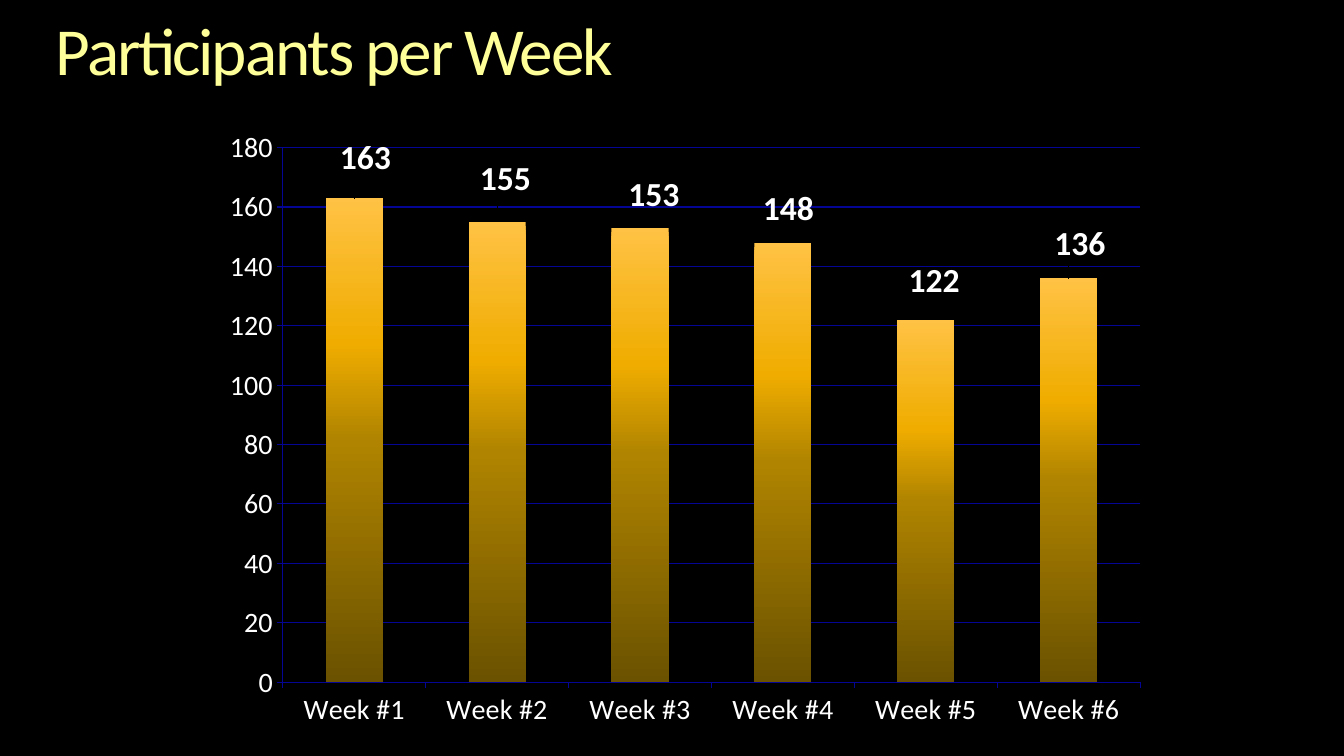
from lxml import etree
from pptx import Presentation
from pptx.chart.data import CategoryChartData
from pptx.dml.color import RGBColor
from pptx.enum.chart import XL_CHART_TYPE, XL_LABEL_POSITION, XL_TICK_MARK
from pptx.enum.text import MSO_ANCHOR, MSO_AUTO_SIZE, PP_ALIGN
from pptx.oxml import parse_xml
from pptx.oxml.ns import nsdecls, qn
from pptx.util import Pt

COLUMN_CLUSTERED = XL_CHART_TYPE.COLUMN_CLUSTERED
OUTSIDE_END = XL_LABEL_POSITION.OUTSIDE_END
TICK_OUTSIDE = XL_TICK_MARK.OUTSIDE
TICK_NONE = XL_TICK_MARK.NONE
MIDDLE = MSO_ANCHOR.MIDDLE
GROW = MSO_AUTO_SIZE.SHAPE_TO_FIT_TEXT
LEFT = PP_ALIGN.LEFT

BLACK = RGBColor(0x00, 0x00, 0x00)
WHITE = RGBColor(0xFF, 0xFF, 0xFF)
NAVY = RGBColor(0x05, 0x05, 0x95)
CREAM = RGBColor(0xFF, 0xFF, 0xB9)
YELLOW = RGBColor(0xFF, 0xFF, 0x99)
ORANGE = RGBColor(0xF6, 0xAE, 0x1E)
LIGHT_GOLD = RGBColor(0xFF, 0xC2, 0x44)
GOLD = RGBColor(0xF0, 0xAD, 0x00)
DARK_GOLD = RGBColor(0xB0, 0x84, 0x00)
BROWN = RGBColor(0x6B, 0x52, 0x00)

FONT_NAME = "Calibri"
CHART_WIDTH, CHART_HEIGHT = 678, 444
PLOT_AREA = {"x": 52, "y": 21.5, "w": 612.5, "h": 381.8}
TITLE_STOPS = [(0, CREAM), (36, YELLOW), (86, ORANGE)]
BAR_STOPS = [(0, LIGHT_GOLD), (30, GOLD), (50, DARK_GOLD), (100, BROWN)]
WEEKS = [
    (163, 8, -11),
    (155, 6, -13),
    (153, 10, -6),
    (148, 4, -6),
    (122, 6, -10),
    (136, 8, -7),
]


def vertical_gradient(stops):
    stop_xml = "".join(
        f'<a:gs pos="{position * 1000}"><a:srgbClr val="{color}"/></a:gs>'
        for position, color in stops
    )
    return parse_xml(
        f'<a:gradFill {nsdecls("a")} rotWithShape="1"><a:gsLst>{stop_xml}</a:gsLst>'
        '<a:lin ang="5400000" scaled="0"/></a:gradFill>'
    )


def manual_layout(values):
    layout = etree.Element(qn("c:layout"))
    manual = etree.SubElement(layout, qn("c:manualLayout"))
    if "w" in values:
        for name, value in [("layoutTarget", "inner"), ("xMode", "edge"), ("yMode", "edge")]:
            etree.SubElement(manual, qn(f"c:{name}")).set("val", value)
    for name, value in values.items():
        extent = CHART_WIDTH if name in "xw" else CHART_HEIGHT
        etree.SubElement(manual, qn(f"c:{name}")).set("val", str(value / extent))
    return layout


presentation = Presentation()
presentation.slide_width = Pt(960)
presentation.slide_height = Pt(540)
slide = presentation.slides.add_slide(presentation.slide_layouts[5])
slide.background.fill.solid()
slide.background.fill.fore_color.rgb = BLACK

title = slide.shapes.title
title_box = {"left": 40, "top": 12, "width": 880, "height": 52.7}
for name, value in title_box.items():
    setattr(title, name, Pt(value))
frame = title.text_frame
frame_format = {
    "margin_left": 0,
    "margin_top": 0,
    "margin_right": 0,
    "margin_bottom": 0,
    "word_wrap": True,
    "auto_size": GROW,
    "vertical_anchor": MIDDLE,
}
for name, value in frame_format.items():
    setattr(frame, name, value)
paragraph = frame.paragraphs[0]
paragraph.alignment = LEFT
paragraph.line_spacing = 0.9
run = paragraph.add_run()
run.text = "Participants per Week"
run.font.size = Pt(48)
run.font.name = FONT_NAME
run_properties = run.font._element
run_properties.set("spc", "-150")
run_properties.insert(0, vertical_gradient(TITLE_STOPS))

chart_data = CategoryChartData()
chart_data.categories = [f"Week #{number}" for number in range(1, len(WEEKS) + 1)]
chart_data.add_series("Series 1", [participants for participants, _, _ in WEEKS])
chart = slide.shapes.add_chart(
    COLUMN_CLUSTERED, Pt(150), Pt(84), Pt(CHART_WIDTH), Pt(CHART_HEIGHT), chart_data
).chart
chart.has_title = False
chart.has_legend = False
chart.font.name = FONT_NAME
chart.font.size = Pt(18)
chart.font.color.rgb = WHITE

value_axis = chart.value_axis
axis_format = {
    "minimum_scale": 0,
    "maximum_scale": 180,
    "major_unit": 20,
    "has_major_gridlines": True,
}
for name, value in axis_format.items():
    setattr(value_axis, name, value)
for axis in (chart.category_axis, value_axis):
    axis.major_tick_mark = TICK_OUTSIDE
    axis.minor_tick_mark = TICK_NONE
    axis.tick_labels.font.size = Pt(20)
for element in (chart.category_axis, value_axis, value_axis.major_gridlines):
    element.format.line.color.rgb = NAVY
    element.format.line.width = Pt(0.75)

plot = chart.plots[0]
plot.gap_width = 150
plot.vary_by_categories = False
series = plot.series[0]
series.format.fill.solid()
solid_fill = series.format.fill._xPr.find(qn("a:solidFill"))
solid_fill.getparent().replace(solid_fill, vertical_gradient(BAR_STOPS))

labels = series.data_labels
labels.show_value = True
point_labels = [point.data_label for point in series.points]
for label in [labels, *point_labels]:
    label.position = OUTSIDE_END
    label.font.size = Pt(24)
    label.font.bold = True
    label.font.name = FONT_NAME
    label.font.color.rgb = WHITE
for label_element, (_, shift_x, shift_y) in zip(chart.element.xpath(".//c:dLbl"), WEEKS):
    label_element.insert(1, manual_layout({"x": shift_x, "y": shift_y}))

plot_area = chart.element.xpath(".//c:plotArea")[0]
for layout in plot_area.findall(qn("c:layout")):
    plot_area.remove(layout)
plot_area.insert(0, manual_layout(PLOT_AREA))

presentation.save("out.pptx")
